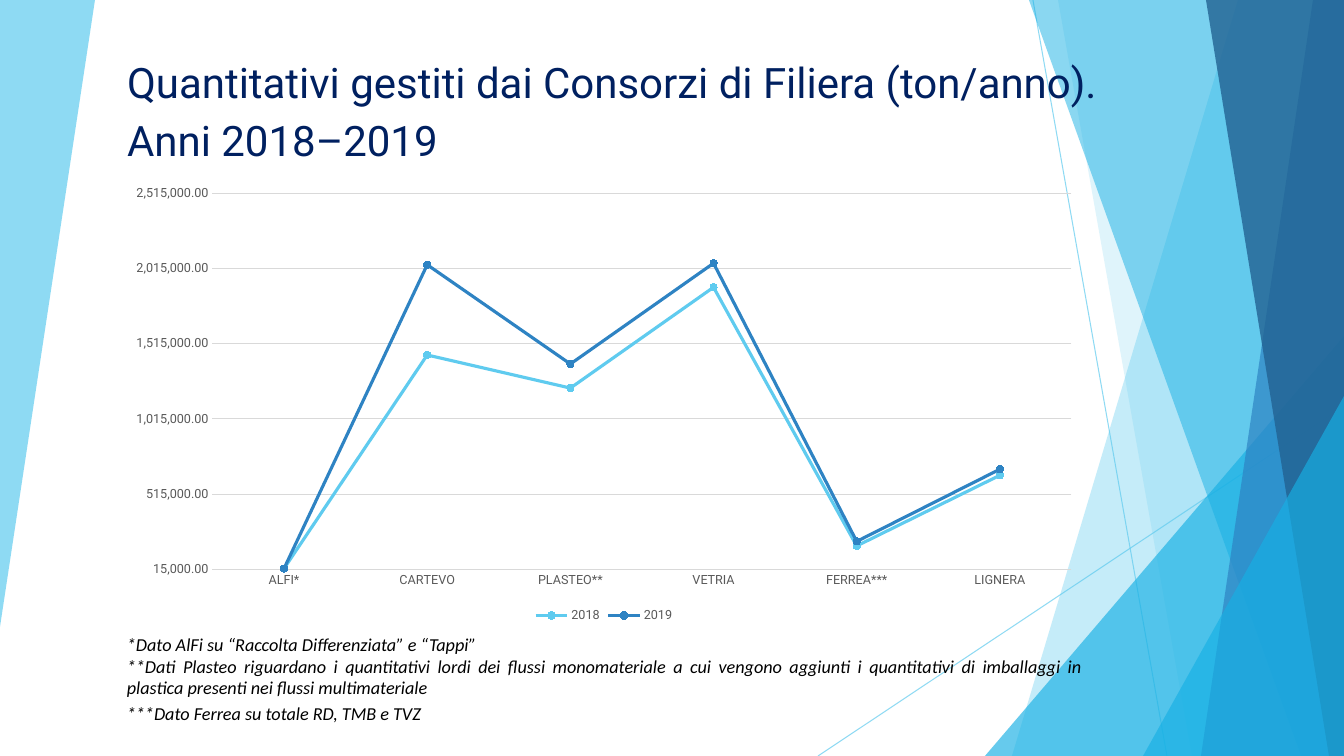
"""Builds the slide on yearly tonnages handled by the packaging consortia."""
from lxml import etree
from pptx import Presentation, util as u
from pptx.chart.data import CategoryChartData
from pptx.dml.color import RGBColor
from pptx.enum import chart as ch, shapes, text
from pptx.oxml.ns import qn

W, H = 1344, 756
CYAN, SKY, BLUE, NAVY = "5FCBEF", "17B0E4", "2E83C3", "226292"
GREY, RULE = "595959", "D9D9D9"

TITLE = "Quantitativi gestiti dai Consorzi di Filiera (ton/anno). Anni 2018–2019"
NOTES = [
    "*Dato AlFi su “Raccolta Differenziata” e “Tappi”",
    "**Dati Plasteo riguardano i quantitativi lordi dei flussi monomateriale a cui "
    "vengono aggiunti i quantitativi di imballaggi in plastica presenti nei flussi multimateriale",
    "***Dato Ferrea su totale RD, TMB e TVZ",
]
CONSORTIA = ["ALFI*", "CARTEVO", "PLASTEO**", "VETRIA", "FERREA***", "LIGNERA"]
YEARS = [
    ("2018", CYAN, [20000, 1440000, 1220000, 1890000, 170000, 640000]),
    ("2019", BLUE, [20000, 2040000, 1380000, 2050000, 200000, 680000]),
]
TITLE_BOX = (117, 43, 1008, 127)
CHART_BOX = (117, 177, 974, 450)
NOTES_BOX = (117, 628, 974, 100)

FACETS = [
    ("polygon", CYAN, 70, [(0, 0), (95, 0), (0, 627)]),
    ("line", CYAN, 70, [(1033, 0), (1167, H)]),
    ("line", CYAN, 70, [(W, 406), (818, H)]),
    ("polygon", CYAN, 36, [(1238, 0), (W, 0), (W, H), (1012, H)]),
    ("polygon", CYAN, 20, [(1058, 0), (W, 0), (W, H), (1192, H)]),
    ("triangle", SKY, 66, [(985, 336), (W, H)]),
    ("polygon", SKY, 50, [(1029, 0), (W, 0), (W, H), (1301, H)]),
    ("polygon", BLUE, 70, [(1313, 0), (W, 0), (W, H), (1201, H)]),
    ("polygon", NAVY, 80, [(1206, 0), (W, 0), (W, H), (1329, H)]),
    ("triangle", SKY, 66, [(1143, 396), (W, H)]),
]


def px(*lengths):
    """Turn pixel lengths into EMU."""
    return [u.Emu(round(n * 914400 / 100.8)) for n in lengths]


def rgb(value):
    """Turn a hex string into a colour."""
    return RGBColor.from_string(value)


def paint(fmt, color, alpha=100):
    """Give a fill a solid colour and opacity in percent."""
    fmt.solid()
    fmt.fore_color.rgb = rgb(color)
    if alpha < 100:
        for clr in fmt._xPr.iter(qn("a:srgbClr")):
            etree.SubElement(clr, qn("a:alpha"), val=str(alpha * 1000))


def style(font, size, color, name="Roboto", italic=False):
    """Format a font."""
    font.size, font.name, font.italic = u.Pt(size), name, italic
    font.color.rgb = rgb(color)


def write(p, content, align, spacing=None, after=0, **font):
    """Write one formatted paragraph."""
    p.alignment, p.space_before, p.space_after = align, u.Pt(0), u.Pt(after)
    if spacing:
        p.line_spacing = spacing
    r = p.add_run()
    r.text = content
    style(r.font, **font)


def add_facet(slide, kind, color, alpha, points):
    """Draw one translucent part of the backdrop."""
    pts = [tuple(px(*pt)) for pt in points]
    if kind == "line":
        sp = slide.shapes.add_connector(shapes.MSO_CONNECTOR.STRAIGHT, *pts[0], *pts[1])
        sp.line.width = u.Pt(0.75)
        paint(sp.line.fill, color, alpha)
        etree.SubElement(sp._element.spPr, qn("a:effectLst"))
        return
    if kind == "triangle":
        (x, y), (right, bottom) = pts
        sp = slide.shapes.add_shape(
            shapes.MSO_SHAPE.ISOSCELES_TRIANGLE, x, y, right - x, bottom - y)
        sp.adjustments[0] = 1
    else:
        builder = slide.shapes.build_freeform(*pts[0])
        builder.add_line_segments(pts[1:], close=True)
        sp = builder.convert_to_shape()
    sp.shadow.inherit = False
    paint(sp.fill, color, alpha)
    sp.line.fill.background()


def add_title(slide):
    """Place the title in front of the backdrop."""
    sp = slide.shapes.title
    slide.shapes._spTree.append(sp._element)
    sp.left, sp.top, sp.width, sp.height = px(*TITLE_BOX)
    tf = sp.text_frame
    tf.word_wrap, tf.auto_size = True, text.MSO_AUTO_SIZE.NONE
    tf.vertical_anchor = text.MSO_ANCHOR.BOTTOM
    write(tf.paragraphs[0], TITLE, text.PP_ALIGN.LEFT, 1.15, 10, size=30, color="002060")


def add_notes(slide):
    """Place the footnotes under the chart."""
    tf = slide.shapes.add_textbox(*px(*NOTES_BOX)).text_frame
    tf.word_wrap, tf.auto_size = True, text.MSO_AUTO_SIZE.SHAPE_TO_FIT_TEXT
    for i, note in enumerate(NOTES):
        p = tf.add_paragraph() if i else tf.paragraphs[0]
        spacing, after = (1.15, 10) if note == NOTES[-1] else (None, 0)
        write(p, note, text.PP_ALIGN.JUSTIFY, spacing, after,
              size=13, color="000000", name="Calibri", italic=True)


def add_tonnage_chart(slide):
    """Add the line chart with one line per year."""
    data = CategoryChartData(number_format="#,##0.00")
    data.categories = CONSORTIA
    for year, _, tons in YEARS:
        data.add_series(year, tons)
    chart = slide.shapes.add_chart(
        ch.XL_CHART_TYPE.LINE_MARKERS, *px(*CHART_BOX), data).chart
    style(chart.font, 10, "000000")
    chart.has_title = False
    chart.has_legend = True
    chart.legend.position = ch.XL_LEGEND_POSITION.BOTTOM
    chart.legend.include_in_layout = False
    style(chart.legend.font, 9, GREY)

    cat, val = chart.category_axis, chart.value_axis
    for axis in (cat, val):
        axis.major_tick_mark = axis.minor_tick_mark = ch.XL_TICK_MARK.NONE
        style(axis.tick_labels.font, 9, GREY)
    val.minimum_scale, val.maximum_scale, val.major_unit = 15000, 2515000, 500000
    val.tick_labels.number_format = "#,##0.00"
    val.tick_labels.number_format_is_linked = False
    val.format.line.fill.background()
    for line in (cat.format.line, val.major_gridlines.format.line):
        line.width = u.Pt(0.75)
        paint(line.fill, RULE)

    plot = chart.plots[0]
    plot.vary_by_categories = False
    for series, (_, color, _) in zip(plot.series, YEARS):
        series.smooth = False
        series.format.line.width = u.Pt(2.25)
        paint(series.format.line.fill, color)
        series.marker.style, series.marker.size = ch.XL_MARKER_STYLE.CIRCLE, 5
        paint(series.marker.format.fill, color)
        paint(series.marker.format.line.fill, color)


def main():
    """Build and save the slide."""
    prs = Presentation()
    prs.slide_width, prs.slide_height = px(W, H)
    slide = prs.slides.add_slide(prs.slide_layouts[5])
    for facet in FACETS:
        add_facet(slide, *facet)
    add_title(slide)
    add_notes(slide)
    add_tonnage_chart(slide)
    prs.save("out.pptx")


if __name__ == "__main__":
    main()
